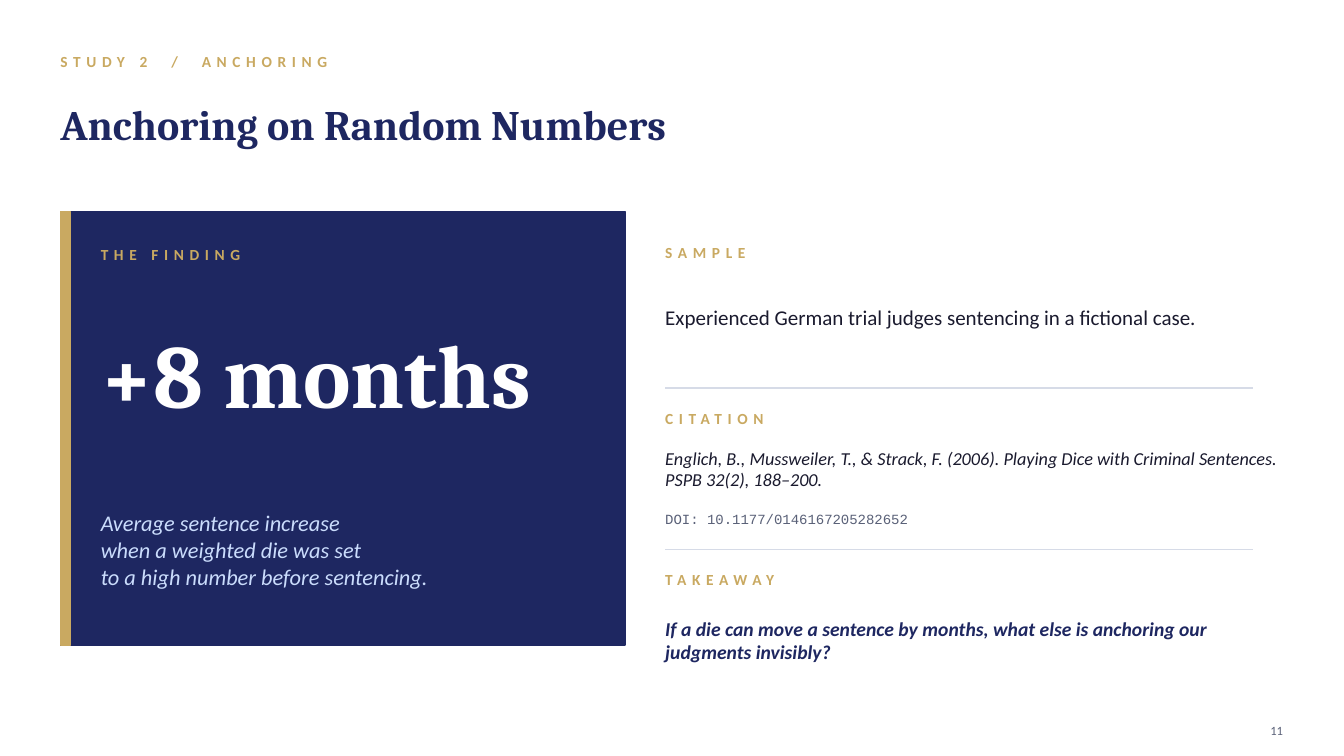
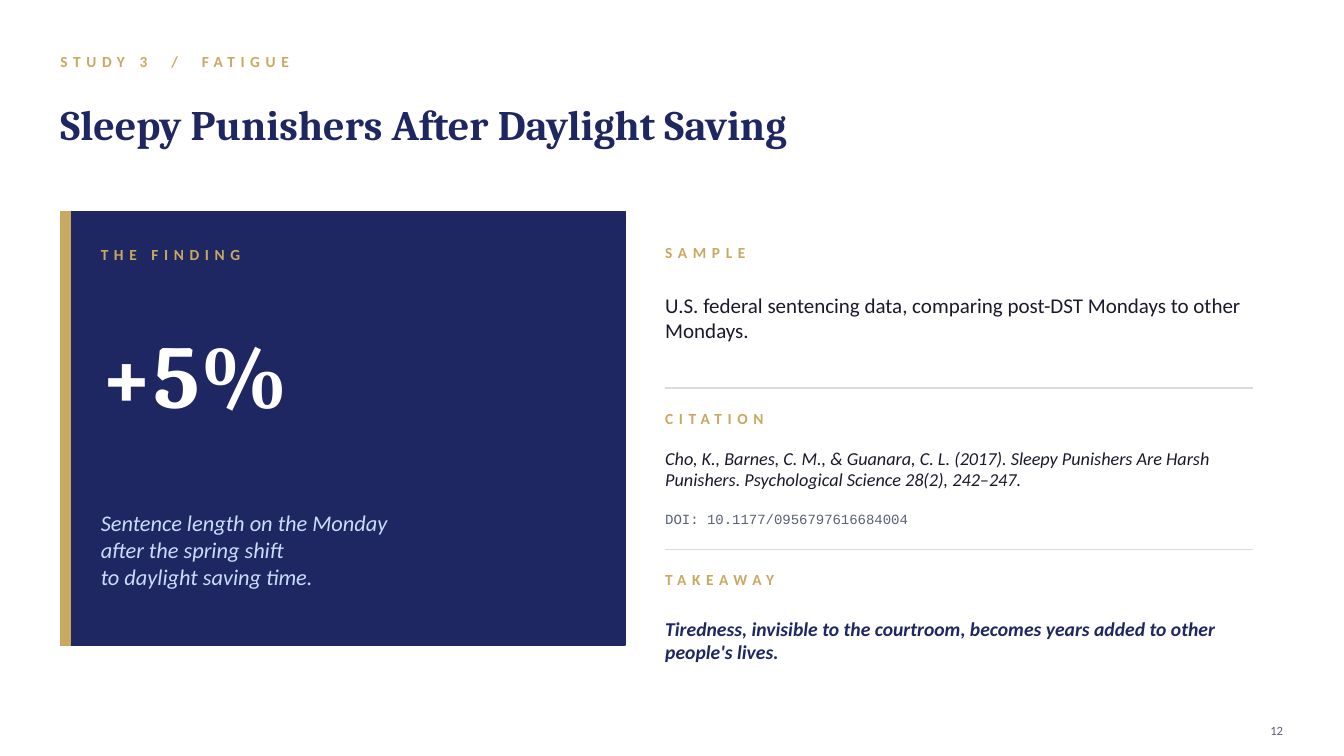
from dataclasses import dataclass

from lxml.etree import SubElement
from pptx import Presentation
from pptx.dml.color import RGBColor
from pptx.enum.shapes import MSO_CONNECTOR, MSO_SHAPE
from pptx.enum.text import MSO_ANCHOR, PP_ALIGN
from pptx.oxml.ns import qn
from pptx.util import Pt

NAVY = RGBColor(0x1E, 0x27, 0x61)
GOLD = RGBColor(0xC9, 0xA9, 0x61)
ICE = RGBColor(0xCA, 0xDC, 0xFC)
WHITE = RGBColor(0xFF, 0xFF, 0xFF)
INK = RGBColor(0x1A, 0x1A, 0x2E)
GRAY = RGBColor(0x5A, 0x61, 0x78)
RULE = RGBColor(0xD6, 0xDB, 0xE7)

LABEL = {"name": "Calibri", "size": Pt(11), "bold": True, "color": GOLD}
TITLE = {"name": "Cambria", "size": Pt(30), "bold": True, "color": NAVY}
FIGURE = {"name": "Cambria", "size": Pt(64), "bold": True, "color": WHITE}
DETAIL = {"name": "Calibri", "size": Pt(16), "italic": True, "color": ICE}
BODY = {"name": "Calibri", "size": Pt(15), "color": INK}
CITATION = {"name": "Calibri", "size": Pt(13), "italic": True, "color": INK}
DOI = {"name": "Courier New", "size": Pt(10), "color": GRAY}
TAKEAWAY = {"name": "Calibri", "size": Pt(14), "bold": True, "italic": True, "color": NAVY}
PAGE_NUMBER = {"name": "Calibri", "size": Pt(9), "color": GRAY}

LABEL_SPACING = 4
SLASH_SPACING = 10.5

MARGIN = 43.2
FULL_WIDTH = 873.36
CARD_TOP, CARD_HEIGHT = 151.2, 309.6
CARD_TEXT_LEFT, CARD_TEXT_WIDTH = 72, 360
COLUMN_LEFT, COLUMN_WIDTH = 475.2, 441.36
RULE_RIGHT = 894.96


@dataclass
class Study:
    number: int
    topic: str
    title: str
    figure: str
    detail: list
    sample: str
    citation: str
    doi: str
    takeaway: str
    page: int


STUDIES = [
    Study(
        number=2,
        topic="ANCHORING",
        title="Anchoring on Random Numbers",
        figure="+8 months",
        detail=[
            "Average sentence increase",
            "when a weighted die was set",
            "to a high number before sentencing.",
        ],
        sample="Experienced German trial judges sentencing in a fictional case.",
        citation="Englich, B., Mussweiler, T., & Strack, F. (2006). "
        "Playing Dice with Criminal Sentences. PSPB 32(2), 188–200.",
        doi="DOI: 10.1177/0146167205282652",
        takeaway="If a die can move a sentence by months, "
        "what else is anchoring our judgments invisibly?",
        page=11,
    ),
    Study(
        number=3,
        topic="FATIGUE",
        title="Sleepy Punishers After Daylight Saving",
        figure="+5%",
        detail=[
            "Sentence length on the Monday",
            "after the spring shift",
            "to daylight saving time.",
        ],
        sample="U.S. federal sentencing data, comparing post-DST Mondays to other Mondays.",
        citation="Cho, K., Barnes, C. M., & Guanara, C. L. (2017). "
        "Sleepy Punishers Are Harsh Punishers. Psychological Science 28(2), 242–247.",
        doi="DOI: 10.1177/0956797616684004",
        takeaway="Tiredness, invisible to the courtroom, "
        "becomes years added to other people's lives.",
        page=12,
    ),
]


def add_run(paragraph, text, style, spacing=0):
    run = paragraph.add_run()
    run.text = text
    for name, value in style.items():
        if name == "color":
            run.font.color.rgb = value
        else:
            setattr(run.font, name, value)
    if spacing:
        run.font._element.set("spc", str(round(spacing * 100)))


def add_frame(slide, left, top, width, height):
    box = slide.shapes.add_textbox(Pt(left), Pt(top), Pt(width), Pt(height))
    frame = box.text_frame
    settings = {
        "word_wrap": True,
        "vertical_anchor": MSO_ANCHOR.MIDDLE,
        "margin_left": 0,
        "margin_top": 0,
        "margin_right": 0,
        "margin_bottom": 0,
    }
    for name, value in settings.items():
        setattr(frame, name, value)
    return frame


def add_text(slide, lines, left, top, width, height, style, alignment=PP_ALIGN.LEFT, spacing=0):
    frame = add_frame(slide, left, top, width, height)
    for index, line in enumerate(lines):
        paragraph = frame.add_paragraph() if index else frame.paragraphs[0]
        paragraph.alignment = alignment
        add_run(paragraph, line, style, spacing)


def add_label(slide, text, left, top, width, height=21.6):
    add_text(slide, [text], left, top, width, height, LABEL, spacing=LABEL_SPACING)


def add_rectangle(slide, left, top, width, height, color):
    shape = slide.shapes.add_shape(
        MSO_SHAPE.RECTANGLE, Pt(left), Pt(top), Pt(width), Pt(height)
    )
    shape.shadow.inherit = False
    shape.fill.solid()
    shape.fill.fore_color.rgb = color
    shape.line.color.rgb = color
    shape.line.width = Pt(1)


def add_rule(slide, top):
    connector = slide.shapes.add_connector(
        MSO_CONNECTOR.STRAIGHT, Pt(COLUMN_LEFT), Pt(top), Pt(RULE_RIGHT), Pt(top)
    )
    connector.line.color.rgb = RULE
    connector.line.width = Pt(1)
    SubElement(connector._element.spPr, qn("a:effectLst"))


def add_heading(slide, study):
    frame = add_frame(slide, MARGIN, 32.4, FULL_WIDTH, 23.04)
    pieces = [
        (f"STUDY {study.number}", LABEL_SPACING),
        (" ", SLASH_SPACING),
        ("/", LABEL_SPACING),
        (" ", SLASH_SPACING),
        (study.topic, LABEL_SPACING),
    ]
    for text, spacing in pieces:
        add_run(frame.paragraphs[0], text, LABEL, spacing)
    add_text(slide, [study.title], MARGIN, 56.16, FULL_WIDTH, 64.8, TITLE)


def add_finding_card(slide, study):
    add_rectangle(slide, MARGIN, CARD_TOP, 403.2, CARD_HEIGHT, NAVY)
    add_rectangle(slide, MARGIN, CARD_TOP, 7.2, CARD_HEIGHT, GOLD)
    add_label(slide, "THE FINDING", CARD_TEXT_LEFT, 169.2, CARD_TEXT_WIDTH, 25.2)
    add_text(slide, [study.figure], CARD_TEXT_LEFT, 201.6, CARD_TEXT_WIDTH, 129.6, FIGURE)
    add_text(slide, study.detail, CARD_TEXT_LEFT, 338.4, CARD_TEXT_WIDTH, 108, DETAIL)


def add_evidence_column(slide, study):
    for label, top in (("SAMPLE", 169.2), ("CITATION", 288), ("TAKEAWAY", 403.2)):
        add_label(slide, label, COLUMN_LEFT, top, COLUMN_WIDTH)
    texts = [
        (study.sample, 190.8, 72, BODY),
        (study.citation, 309.6, 50.4, CITATION),
        (study.doi, 360, 21.6, DOI),
        (study.takeaway, 424.8, 64.8, TAKEAWAY),
    ]
    for text, top, height, style in texts:
        add_text(slide, [text], COLUMN_LEFT, top, COLUMN_WIDTH, height, style)
    for top in (277.2, 392.4):
        add_rule(slide, top)


def add_page_number(slide, page):
    add_text(slide, [str(page)], 880.56, 511.2, 36, 21.6, PAGE_NUMBER, PP_ALIGN.RIGHT)


def add_study_slide(presentation, study):
    slide = presentation.slides.add_slide(presentation.slide_layouts[6])
    slide.background.fill.solid()
    slide.background.fill.fore_color.rgb = WHITE
    add_heading(slide, study)
    add_finding_card(slide, study)
    add_evidence_column(slide, study)
    add_page_number(slide, study.page)


def main():
    presentation = Presentation()
    presentation.slide_width = Pt(960)
    presentation.slide_height = Pt(540)
    for study in STUDIES:
        add_study_slide(presentation, study)
    presentation.save("out.pptx")


if __name__ == "__main__":
    main()
